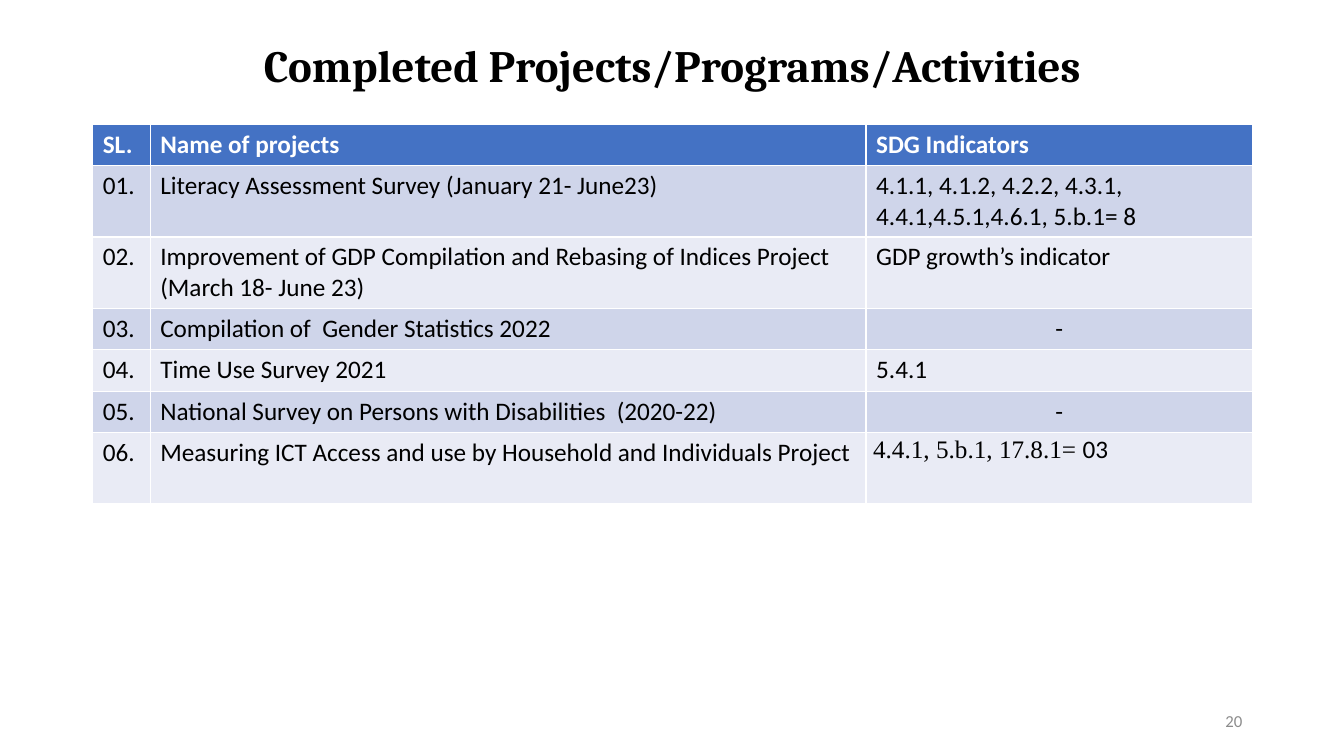
"""Build the slide that lists completed projects and their SDG indicators."""
from pptx import Presentation
from pptx.dml.color import RGBColor
from pptx.enum.text import MSO_ANCHOR, MSO_AUTO_SIZE, PP_ALIGN
from pptx.util import Inches, Pt

BLACK = RGBColor(0x00, 0x00, 0x00)
WHITE = RGBColor(0xFF, 0xFF, 0xFF)
GRAY = RGBColor(0x8C, 0x8C, 0x8C)
HEADER_BLUE = RGBColor(0x44, 0x72, 0xC4)
BANDS = [RGBColor(0xE9, 0xEB, 0xF5), RGBColor(0xCF, 0xD5, 0xEA)]

LEFT, WIDTH = 0.92, 11.5
COLUMN_WIDTHS = [0.57, 7.1, 3.83]
ONE_LINE, TWO_LINES = 0.41, 0.71

PROJECTS = [
    ("SL.", "Name of projects", "SDG Indicators", ONE_LINE),
    ("01.", "Literacy Assessment Survey (January 21- June23)",
     "4.1.1, 4.1.2, 4.2.2, 4.3.1, 4.4.1,4.5.1,4.6.1, 5.b.1= 8", TWO_LINES),
    ("02.", "Improvement of GDP Compilation and Rebasing of Indices Project (March 18- June 23)",
     "GDP growth’s indicator", TWO_LINES),
    ("03.", "Compilation of  Gender Statistics 2022", "-", ONE_LINE),
    ("04.", "Time Use Survey 2021", "5.4.1", ONE_LINE),
    ("05.", "National Survey on Persons with Disabilities  (2020-22)", "-", ONE_LINE),
    ("06.", "Measuring ICT Access and use by Household and Individuals Project",
     "4.4.1, 5.b.1, 17.8.1= ", TWO_LINES),
]


def style(run, font_name, size, color, bold=False):
    run.font.name = font_name
    run.font.size = Pt(size)
    run.font.color.rgb = color
    run.font.bold = bold


presentation = Presentation()
presentation.slide_width = Inches(13.33)
presentation.slide_height = Inches(7.5)
slide = presentation.slides.add_slide(presentation.slide_layouts[5])

title = slide.shapes.title
title.left, title.top = Inches(LEFT), Inches(0.4)
title.width, title.height = Inches(WIDTH), Inches(0.55)
title.text_frame.text = "Completed Projects/Programs/Activities"
title.text_frame.auto_size = MSO_AUTO_SIZE.NONE
title.text_frame.vertical_anchor = MSO_ANCHOR.MIDDLE
heading = title.text_frame.paragraphs[0]
heading.alignment = PP_ALIGN.CENTER
heading.line_spacing = 0.9
style(heading.runs[0], "Cambria", 32, BLACK, True)

table_height = sum(project[-1] for project in PROJECTS)
projects_table = slide.shapes.add_table(
    len(PROJECTS), len(COLUMN_WIDTHS),
    Inches(LEFT), Inches(1.23), Inches(WIDTH), Inches(table_height)).table
for column, width in zip(projects_table.columns, COLUMN_WIDTHS):
    column.width = Inches(width)

for row, (*entries, height) in enumerate(PROJECTS):
    is_header = row == 0
    projects_table.rows[row].height = Inches(height)
    for col, entry in enumerate(entries):
        cell = projects_table.cell(row, col)
        cell.fill.solid()
        cell.fill.fore_color.rgb = HEADER_BLUE if is_header else BANDS[row % 2]
        cell.text_frame.text = entry
        line = cell.text_frame.paragraphs[0]
        line.alignment = PP_ALIGN.CENTER if entry == "-" else PP_ALIGN.LEFT
        style(line.runs[0], "Calibri", 18, WHITE if is_header else BLACK, is_header)

ict_indicators = projects_table.cell(len(PROJECTS) - 1, 2)
ict_indicators.margin_left = ict_indicators.margin_right = Inches(0.07)
ict_indicators.margin_top = ict_indicators.margin_bottom = 0
ict_line = ict_indicators.text_frame.paragraphs[0]
ict_line.alignment = PP_ALIGN.JUSTIFY
ict_line.line_spacing = 1.07
ict_line.runs[0].font.name = "Times New Roman"
ict_count = ict_line.add_run()
ict_count.text = "03"
style(ict_count, "Calibri", 18, BLACK)

page_number = slide.shapes.add_textbox(
    Inches(LEFT + WIDTH - 3), Inches(6.95), Inches(3), Inches(0.4)).text_frame
page_number.word_wrap = True
page_number.vertical_anchor = MSO_ANCHOR.MIDDLE
page_number.text = "20"
page_number.paragraphs[0].alignment = PP_ALIGN.RIGHT
style(page_number.paragraphs[0].runs[0], "Calibri", 12, GRAY)

presentation.save("out.pptx")
